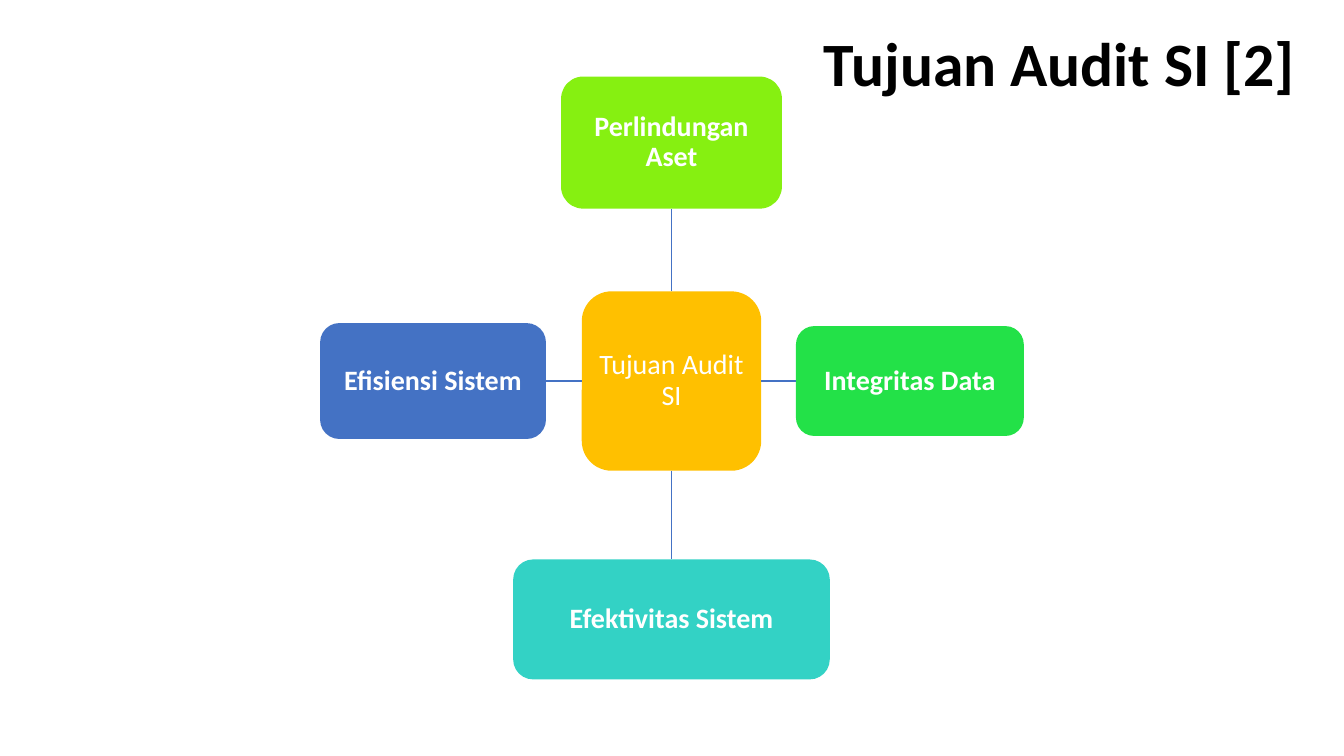
from lxml.etree import SubElement
from pptx import Presentation
from pptx.dml.color import RGBColor
from pptx.enum.shapes import MSO_CONNECTOR, MSO_SHAPE
from pptx.enum.text import MSO_ANCHOR, PP_ALIGN
from pptx.oxml.ns import qn
from pptx.util import Inches, Pt

COLORS = {
    "title": "000000",
    "label": "FFFFFF",
    "line": "4472C4",
    "hub": "FFC000",
    "assets": "86F011",
    "integrity": "23E148",
    "effectiveness": "33D2C5",
    "efficiency": "4472C4",
}
TOP, LEFT, BOTTOM, RIGHT = range(4)
DIRECTIONS = {TOP: (0, -1), LEFT: (-1, 0), BOTTOM: (0, 1), RIGHT: (1, 0)}
GOALS = [
    ("Perlindungan Aset", "assets", TOP, 2.19, 1.31),
    ("Integritas Data", "integrity", RIGHT, 2.26, 1.09),
    ("Efektivitas Sistem", "effectiveness", BOTTOM, 3.14, 1.19),
    ("Efisiensi Sistem", "efficiency", LEFT, 2.24, 1.15),
]


def color(name):
    return RGBColor.from_string(COLORS[name])


def write_text(shape, text, size=20, bold=True, color_name="label", align=PP_ALIGN.CENTER):
    frame = shape.text_frame
    frame.word_wrap = True
    frame.vertical_anchor = MSO_ANCHOR.MIDDLE
    paragraph = frame.paragraphs[0]
    paragraph.alignment = align
    paragraph.line_spacing = 0.9
    run = paragraph.add_run()
    run.text = text
    run.font.name = "Calibri"
    run.font.size = Pt(size)
    run.font.bold = bold
    run.font.color.rgb = color(color_name)


def add_title(slide, text, left, top, width, height):
    title = slide.shapes.title
    title.left, title.top = Inches(left), Inches(top)
    title.width, title.height = Inches(width), Inches(height)
    write_text(title, text, size=44, color_name="title", align=PP_ALIGN.RIGHT)


def add_node(slide, text, fill, center_x, center_y, width, height, bold=True):
    node = slide.shapes.add_shape(
        MSO_SHAPE.ROUNDED_RECTANGLE,
        Inches(center_x - width / 2), Inches(center_y - height / 2),
        Inches(width), Inches(height),
    )
    node.shadow.inherit = False
    node.fill.solid()
    node.fill.fore_color.rgb = color(fill)
    node.line.fill.background()
    frame = node.text_frame
    frame.margin_left = frame.margin_right = Inches(0.06)
    frame.margin_top = frame.margin_bottom = Inches(0.06)
    write_text(node, text, bold=bold)
    return node


def add_link(slide, hub, node, side):
    link = slide.shapes.add_connector(MSO_CONNECTOR.STRAIGHT, 0, 0, 0, 0)
    link.begin_connect(hub, side)
    link.end_connect(node, (side + 2) % 4)
    link.line.color.rgb = color("line")
    link.line.width = Pt(1)
    SubElement(link._element.spPr, qn("a:effectLst"))


def add_radial_diagram(slide, center_x, center_y, hub_size, radius):
    hub = add_node(slide, "Tujuan Audit SI", "hub", center_x, center_y,
                   hub_size, hub_size, bold=False)
    for text, fill, side, width, height in GOALS:
        step_x, step_y = DIRECTIONS[side]
        node = add_node(slide, text, fill, center_x + step_x * radius,
                        center_y + step_y * radius, width, height)
        add_link(slide, hub, node, side)


def main():
    presentation = Presentation()
    presentation.slide_width = Inches(13.33)
    presentation.slide_height = Inches(7.5)
    slide = presentation.slides.add_slide(presentation.slide_layouts[5])
    add_title(slide, "Tujuan Audit SI [2]", 2.47, 0.21, 10.48, 0.91)
    add_radial_diagram(slide, 6.66, 3.78, 1.78, 2.365)
    presentation.save("out.pptx")


if __name__ == "__main__":
    main()
